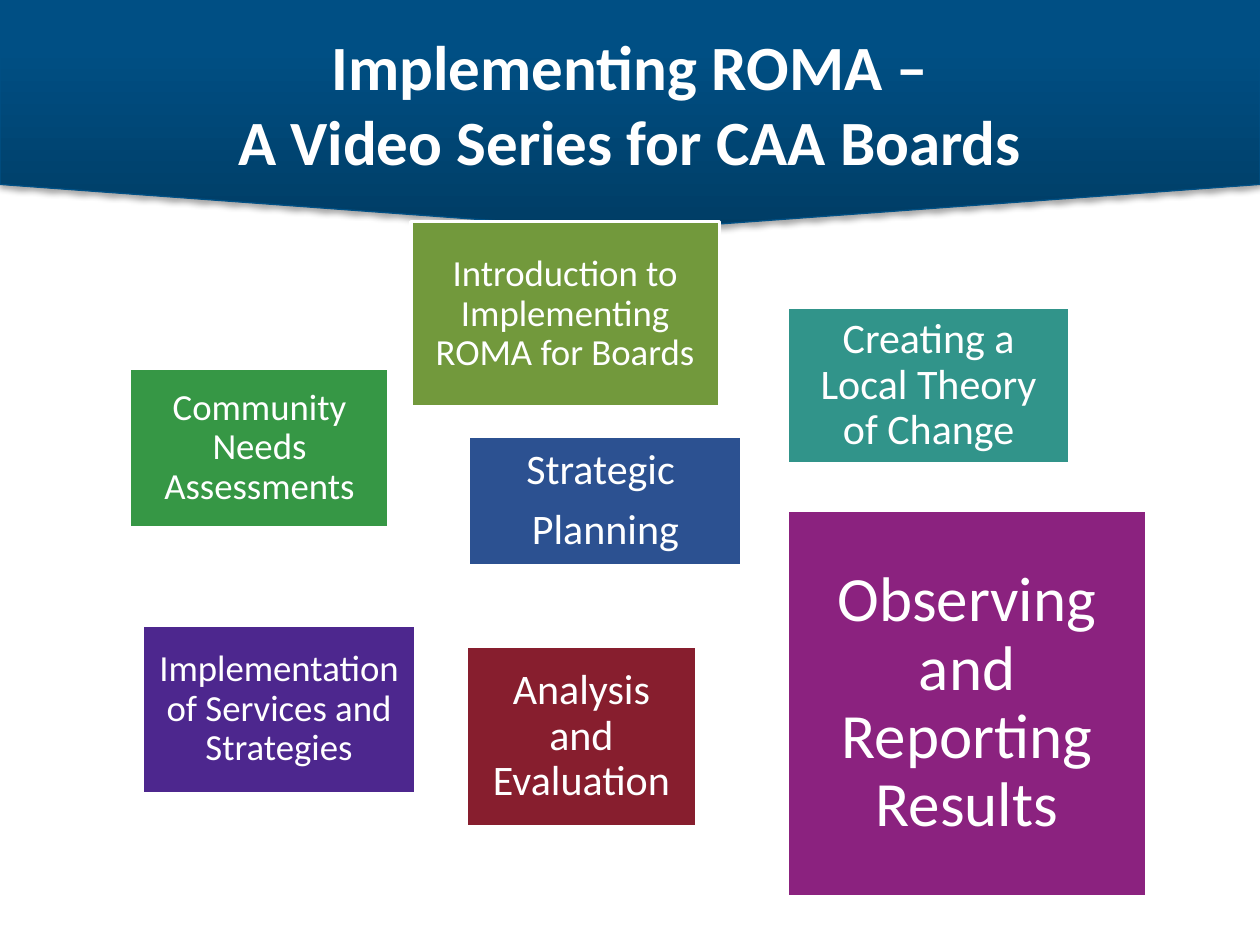
import pptx
import pptx.dml.color
import pptx.enum.shapes
import pptx.enum.text
import pptx.oxml
import pptx.oxml.ns
import pptx.util
from dataclasses import dataclass

Inches = pptx.util.Inches
Pt = pptx.util.Pt
Shape = pptx.enum.shapes.MSO_SHAPE


@dataclass(frozen=True)
class Theme:
    font: str = "Calibri"
    white: str = "FFFFFF"
    edge: str = "005085"
    dark: str = "003D65"
    light: str = "004F84"
    olive: str = "72993C"
    green: str = "369745"
    teal: str = "31948A"
    blue: str = "2C5191"
    violet: str = "4D278E"
    plum: str = "8B227F"
    red: str = "871E2E"
    small: int = 21
    medium: int = 24
    large: int = 36


SHADOW = (
    '<a:outerShdw xmlns:a="http://schemas.openxmlformats.org/drawingml/2006/main" '
    'blurRad="39370" dist="22860" dir="5400000" rotWithShape="0">'
    '<a:srgbClr val="000000"><a:alpha val="35000"/></a:srgbClr></a:outerShdw>'
)


def color(code):
    return pptx.dml.color.RGBColor.from_string(code)


class Deck:
    def __init__(self, theme):
        self.theme = theme
        self.show = pptx.Presentation()
        self.show.slide_width = Inches(10)
        self.show.slide_height = Inches(7.5)
        self.slide = self.show.slides.add_slide(self.show.slide_layouts[6])

    def shape(self, kind, box, edge, width):
        item = self.slide.shapes.add_shape(kind, *map(Inches, box))
        item.shadow.inherit = False
        item.line.color.rgb = color(edge)
        item.line.width = Pt(width)
        return item

    def label(self, item, text, size, bold=False, inset=None, spacing=None, after=0):
        frame = item.text_frame
        frame.text = text
        frame.word_wrap = True
        frame.vertical_anchor = pptx.enum.text.MSO_ANCHOR.MIDDLE
        if inset is not None:
            frame.margin_left = frame.margin_right = Inches(inset)
            frame.margin_top = frame.margin_bottom = Inches(inset)
        for para in frame.paragraphs:
            para.alignment = pptx.enum.text.PP_ALIGN.CENTER
            para.line_spacing = spacing
            para.space_after = Pt(after)
            for run in para.runs:
                run.font.name = self.theme.font
                run.font.size = Pt(size)
                run.font.bold = bold
                run.font.color.rgb = color(self.theme.white)

    def banner(self, box):
        item = self.shape(Shape.FLOWCHART_OFFPAGE_CONNECTOR, box, self.theme.edge, 0.75)
        item.fill.gradient()
        item.fill.gradient_angle = 90
        stops = ((0, self.theme.dark), (0.8, self.theme.light))
        for stop, (place, code) in zip(item.fill.gradient_stops, stops):
            stop.position = place
            stop.color.rgb = color(code)
        effects = item._element.spPr.find(pptx.oxml.ns.qn("a:effectLst"))
        effects.append(pptx.oxml.parse_xml(SHADOW))

    def title(self, box, text):
        item = self.slide.shapes.add_textbox(*map(Inches, box))
        self.label(item, text, self.theme.large, bold=True)

    def card(self, box, fill, size, text):
        """Add a coloured topic box whose inset and spacing follow its type size."""
        item = self.shape(Shape.RECTANGLE, box, self.theme.white, 2)
        item.fill.solid()
        item.fill.fore_color.rgb = color(fill)
        self.label(item, text, size, inset=round(size / 240, 2),
                   spacing=0.9, after=round(size * 0.35, 1))


def main():
    theme = Theme()
    deck = Deck(theme)
    deck.banner((0, 0, 10, 1.83))
    deck.title((0.5, 0.19, 9, 1.25), "Implementing ROMA –\vA Video Series for CAA Boards")
    cards = (
        ((3.26, 1.76, 2.45, 1.47), theme.olive, theme.small,
         "Introduction to Implementing ROMA for Boards"),
        ((1.03, 2.92, 2.06, 1.27), theme.green, theme.small, "Community Needs Assessments"),
        ((6.25, 2.44, 2.24, 1.24), theme.teal, theme.medium, "Creating a Local Theory of Change"),
        ((3.72, 3.46, 2.17, 1.03), theme.blue, theme.medium, "Strategic \nPlanning"),
        ((1.13, 4.96, 2.17, 1.34), theme.violet, theme.small,
         "Implementation of Services and Strategies"),
        ((6.25, 4.05, 2.85, 3.07), theme.plum, theme.large, "Observing and Reporting Results"),
        ((3.7, 5.13, 1.83, 1.43), theme.red, theme.medium, "Analysis and Evaluation"),
    )
    for card in cards:
        deck.card(*card)
    deck.show.save("out.pptx")


if __name__ == "__main__":
    main()
